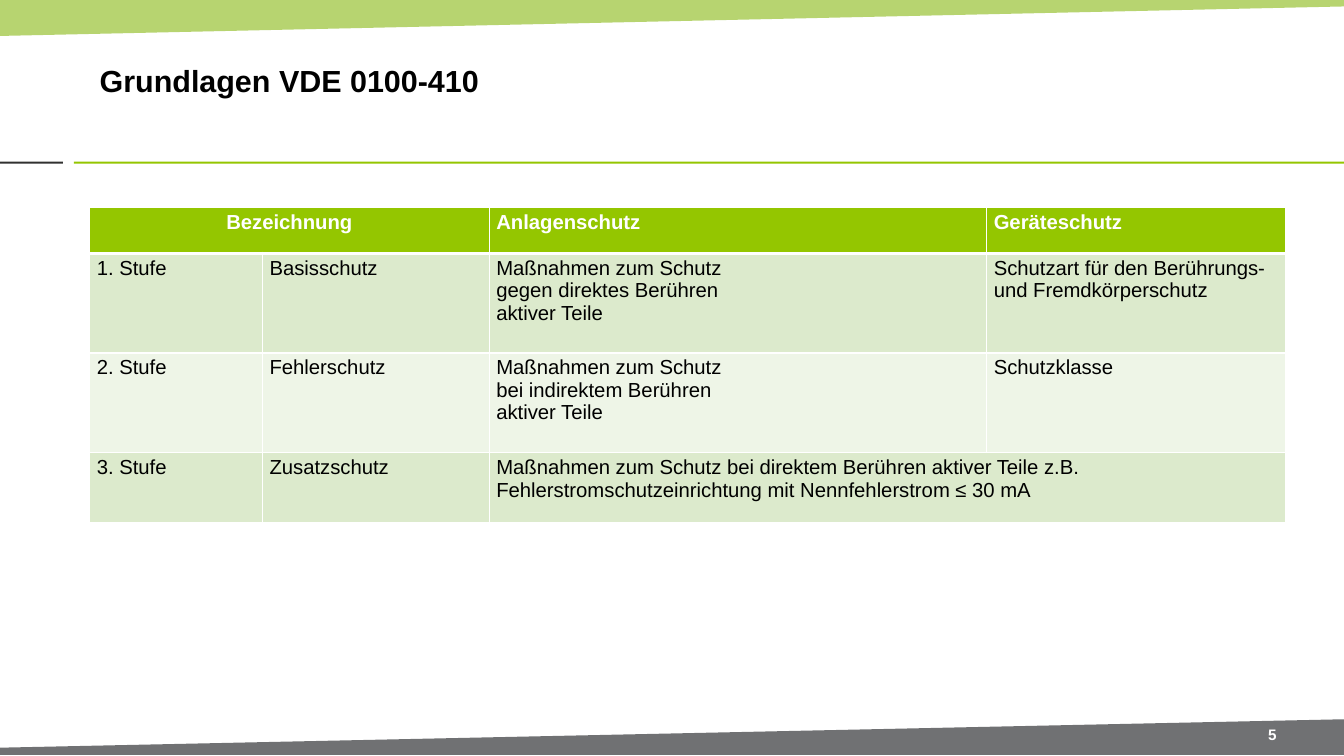
from lxml.etree import SubElement
from pptx import Presentation
from pptx.dml.color import RGBColor
from pptx.enum.shapes import MSO_SHAPE as SHAPE
from pptx.enum.text import MSO_ANCHOR as ANCHOR, PP_ALIGN as ALIGN
from pptx.oxml.ns import qn
from pptx.util import Cm, Pt

WIDTH, HEIGHT = 37.34, 21.01
FONT = "Arial"
BLACK = RGBColor(0x00, 0x00, 0x00)
WHITE = RGBColor(0xFF, 0xFF, 0xFF)
GREEN = RGBColor(0x94, 0xC6, 0x00)
BAND_GREEN = RGBColor(0x95, 0xC0, 0x2A)
BAND_GREY = RGBColor(0x70, 0x71, 0x73)
DARK = RGBColor(0x31, 0x31, 0x30)
ROW_TINTS = (RGBColor(0xDC, 0xEA, 0xCC), RGBColor(0xEE, 0xF5, 0xE7))

COLUMNS = (4.8, 6.3, 13.82, 8.31)
ROWS = (1.27, 2.77, 2.77, 1.93)
CELLS = (
    ("Bezeichnung", None, "Anlagenschutz", "Geräteschutz"),
    ("1. Stufe", "Basisschutz",
     "Maßnahmen zum Schutz\ngegen direktes Berühren\naktiver Teile",
     "Schutzart für den Berührungs- und Fremdkörperschutz"),
    ("2. Stufe", "Fehlerschutz",
     "Maßnahmen zum Schutz\nbei indirektem Berühren\naktiver Teile",
     "Schutzklasse"),
    ("3. Stufe", "Zusatzschutz",
     "Maßnahmen zum Schutz bei direktem Berühren aktiver Teile z.B. "
     "Fehlerstromschutzeinrichtung mit Nennfehlerstrom ≤ 30 mA", None),
)


def write(tf, text, size=16, color=BLACK, bold=False, align=ALIGN.LEFT):
    """Fill a text frame, one paragraph per line of text."""
    tf.word_wrap = True
    tf.text = text
    for p in tf.paragraphs:
        p.alignment = align
        for r in p.runs:
            r.font.name, r.font.size, r.font.bold = FONT, Pt(size), bold
            r.font.color.rgb = color


def paint(s, color):
    """Give a shape a plain fill without line or shadow."""
    s.shadow.inherit = False
    s.fill.solid()
    s.fill.fore_color.rgb = color
    s.line.fill.background()


def add_band(slide, points, color, opacity=100):
    """Draw a slanted band through points given in centimetres."""
    start, *rest = [(Cm(x), Cm(y)) for x, y in points]
    builder = slide.shapes.build_freeform(*start)
    builder.add_line_segments(rest, close=True)
    s = builder.convert_to_shape()
    paint(s, color)
    if opacity < 100:
        clr = s.fill._xPr.find(qn("a:solidFill"))[0]
        SubElement(clr, qn("a:alpha"), val=str(opacity * 1000))


def add_rule(slide, left, width, color):
    """Draw a thin bar below the title."""
    paint(slide.shapes.add_shape(SHAPE.RECTANGLE, Cm(left), Cm(4.49),
                                 Cm(width), Cm(0.06)), color)


def add_text(slide, left, top, width, height, text, **style):
    """Add a vertically centred text box."""
    tf = slide.shapes.add_textbox(Cm(left), Cm(top), Cm(width), Cm(height)).text_frame
    tf.vertical_anchor = ANCHOR.MIDDLE
    tf.margin_left = tf.margin_right = Cm(0.28)
    tf.margin_top = tf.margin_bottom = Cm(0.15)
    write(tf, text, **style)


def set_borders(cell, top=1, bottom=1):
    """Draw white borders around a cell, with widths in points."""
    tcPr = cell._tc.get_or_add_tcPr()
    for side, width in (("L", 1), ("R", 1), ("T", top), ("B", bottom)):
        ln = SubElement(tcPr, qn(f"a:ln{side}"), w=str(Pt(width)))
        fill = SubElement(ln, qn("a:solidFill"))
        SubElement(fill, qn("a:srgbClr"), val=str(WHITE))


def add_protection_table(slide):
    """Add the table of protection levels."""
    table = slide.shapes.add_table(len(ROWS), len(COLUMNS), Cm(2.49), Cm(5.77),
                                   Cm(sum(COLUMNS)), Cm(sum(ROWS))).table
    for column, width in zip(table.columns, COLUMNS):
        column.width = Cm(width)
    for i, (height, texts) in enumerate(zip(ROWS, CELLS)):
        table.rows[i].height = Cm(height)
        header = i == 0
        for j, text in enumerate(texts):
            cell = table.cell(i, j)
            cell.margin_left = cell.margin_right = Cm(0.2)
            cell.margin_top = cell.margin_bottom = Cm(0.1)
            set_borders(cell, top=3 if i == 1 else 1, bottom=3 if header else 1)
            cell.fill.solid()
            cell.fill.fore_color.rgb = GREEN if header else ROW_TINTS[(i - 1) % 2]
            if text is None:
                table.cell(i, j - 1).merge(cell)
            else:
                write(cell.text_frame, text, bold=header,
                      color=WHITE if header else BLACK,
                      align=ALIGN.CENTER if header and j == 0 else ALIGN.LEFT)


def main():
    """Build and save the slide."""
    prs = Presentation()
    prs.slide_width, prs.slide_height = Cm(WIDTH), Cm(HEIGHT)
    slide = prs.slides.add_slide(prs.slide_layouts[6])
    add_band(slide, ((0, 0), (WIDTH, 0), (WIDTH, 0.18), (0, 1)), BAND_GREEN, opacity=67)
    add_rule(slide, 0, 1.75, DARK)
    add_rule(slide, 2.05, WIDTH - 2.05, GREEN)
    add_band(slide, ((WIDTH, 20.98), (0, 20.98), (0, 20.78), (WIDTH, 19.99)), BAND_GREY)
    add_text(slide, 2.49, 0.71, 29.31, 3.02, "Grundlagen VDE 0100-410", size=24, bold=True)
    add_text(slide, 34.26, 20.04, 2.18, 0.74, "5", size=12, color=WHITE, bold=True,
             align=ALIGN.CENTER)
    add_protection_table(slide)
    prs.save("out.pptx")


if __name__ == "__main__":
    main()
